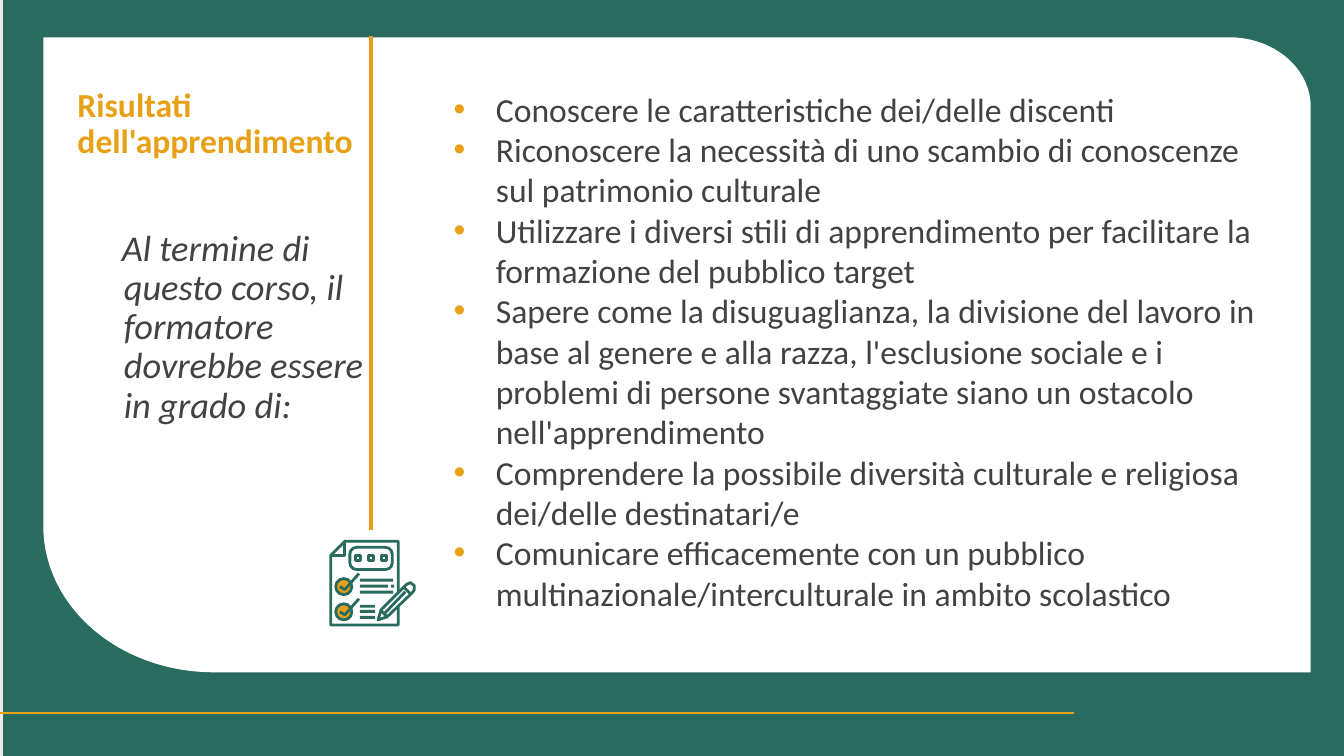
"""Build the learning outcomes slide with its checklist icon."""
from math import cos, pi, sin

from lxml import etree
from pptx import Presentation
from pptx.dml.color import RGBColor
from pptx.enum.shapes import MSO_CONNECTOR, MSO_SHAPE
from pptx.oxml.ns import qn
from pptx.util import Inches, Pt

RECTANGLE, ROUNDED, OVAL = MSO_SHAPE.RECTANGLE, MSO_SHAPE.ROUNDED_RECTANGLE, MSO_SHAPE.OVAL
STRAIGHT = MSO_CONNECTOR.STRAIGHT

COLORS = {"green": "296B5F", "amber": "E8A116", "text": "424242",
          "white": "FFFFFF", "edge": "ECECEC"}
FONT = "Calibri"
SLIDE_W, SLIDE_H = 13.33, 7.5
PANEL = {"left": 0.43, "top": 0.37, "right": 13, "bottom": 6.67}
TOP_RIGHT_RADII = (0.81, 0.69)
BOTTOM_LEFT_RADII = (1.69, 1.45)
ARC_STEPS = 40

HEADING = "Risultati dell'apprendimento"
INTRO = "Al termine di questo corso, il formatore dovrebbe essere in grado di:"
OUTCOMES = [
    "Conoscere le caratteristiche dei/delle discenti",
    "Riconoscere la necessità di uno scambio di conoscenze sul patrimonio culturale",
    "Utilizzare i diversi stili di apprendimento per facilitare la formazione del pubblico target",
    "Sapere come la disuguaglianza, la divisione del lavoro in base al genere e alla razza, "
    "l'esclusione sociale e i problemi di persone svantaggiate siano un ostacolo nell'apprendimento",
    "Comprendere la possibile diversità culturale e religiosa dei/delle destinatari/e",
    "Comunicare efficacemente con un pubblico multinazionale/interculturale in ambito scolastico",
]

ICON_STROKE = 2
PAGE = [(3.42, 5.37), (3.95, 5.37), (3.95, 6.2), (3.28, 6.2), (3.28, 5.51)]
PAGE_FOLD = [(3.28, 5.51), (3.42, 5.51), (3.42, 5.37)]
BADGE = (3.47, 5.43, 0.42, 0.22)
BADGE_SQUARES = [(3.53 + 0.125 * i, 5.51, 0.05, 0.05) for i in range(3)]
WRITTEN_LINES = [(3.57, 5.74, 0.33), (3.57, 5.8, 0.28), (3.88, 5.8, 0.03), (3.57, 5.86, 0.33),
                 (3.57, 6, 0.15), (3.57, 6.05, 0.15), (3.57, 6.11, 0.15)]
CHECK_CENTERS = [(3.41, 5.82), (3.41, 6.07)]
CHECK_RADIUS = 0.08
TICK = [(-0.04, 0), (0.01, 0.03), (0.15, -0.13)]
PENCIL = [(3.75, 6.15), (3.78, 6.05), (4.03, 5.8), (4.07, 5.78), (4.11, 5.81),
          (4.11, 5.85), (4.09, 5.88), (3.84, 6.12)]
PENCIL_DETAILS = [[(3.78, 6.06), (3.84, 6.12)], [(3.82, 6.08), (4.02, 5.87)],
                  [(4.01, 5.83), (4.07, 5.89)]]


def rgb(name):
    return RGBColor.from_string(COLORS[name])


def paint(shape, fill=None, line=None, weight=ICON_STROKE):
    shape.shadow.inherit = False
    if fill:
        shape.fill.solid()
        shape.fill.fore_color.rgb = rgb(fill)
    else:
        shape.fill.background()
    if line:
        shape.line.color.rgb = rgb(line)
        shape.line.width = Pt(weight)
    else:
        shape.line.fill.background()


def add_block(shapes, preset, box, fill=None, line=None, weight=ICON_STROKE):
    block = shapes.add_shape(preset, *map(Inches, box))
    paint(block, fill, line, weight)
    return block


def add_outline(shapes, points, fill=None, line=None, close=True):
    start, *rest = [(Inches(x), Inches(y)) for x, y in points]
    builder = shapes.build_freeform(*start)
    builder.add_line_segments(rest, close=close)
    paint(builder.convert_to_shape(), fill, line)


def add_rule(shapes, start, end, weight):
    rule = shapes.add_connector(STRAIGHT, *map(Inches, start + end))
    rule.line.color.rgb = rgb("amber")
    rule.line.width = Pt(weight)
    etree.SubElement(rule._element.spPr, qn("a:effectLst"))


def arc(center, radii, first_angle):
    angles = [first_angle + pi / 2 * i / ARC_STEPS for i in range(ARC_STEPS + 1)]
    return [(center[0] + radii[0] * cos(a), center[1] + radii[1] * sin(a)) for a in angles]


def panel_points():
    (tr_x, tr_y), (bl_x, bl_y) = TOP_RIGHT_RADII, BOTTOM_LEFT_RADII
    left, top, right, bottom = PANEL.values()
    return ([(left, top)] + arc((right - tr_x, top + tr_y), TOP_RIGHT_RADII, -pi / 2)
            + [(right, bottom)] + arc((left + bl_x, bottom - bl_y), BOTTOM_LEFT_RADII, pi / 2))


def add_bullet(properties):
    color = etree.SubElement(properties, qn("a:buClr"))
    etree.SubElement(color, qn("a:srgbClr"), val=COLORS["amber"])
    etree.SubElement(properties, qn("a:buFont"), typeface="Arial")
    etree.SubElement(properties, qn("a:buChar"), char="•")


def add_text(shapes, box, texts, size, color, margin=0, hanging=0, spacing=1.0,
             bold=False, italic=False, bullets=False):
    frame = shapes.add_textbox(*map(Inches, box)).text_frame
    frame.word_wrap = True
    for index, text in enumerate(texts):
        paragraph = frame.add_paragraph() if index else frame.paragraphs[0]
        paragraph.line_spacing = spacing
        properties = paragraph._p.get_or_add_pPr()
        properties.set("marL", str(Inches(margin)))
        properties.set("indent", str(Inches(-hanging)))
        if bullets:
            add_bullet(properties)
        run = paragraph.add_run()
        run.text = text
        run.font.name, run.font.size = FONT, Pt(size)
        run.font.bold, run.font.italic = bold, italic
        run.font.color.rgb = rgb(color)


def add_checklist_icon(slide):
    icon = slide.shapes.add_group_shape().shapes
    add_outline(icon, PAGE, "white", "green")
    add_outline(icon, PAGE_FOLD, line="green", close=False)
    badge = add_block(icon, ROUNDED, BADGE, line="green")
    badge.adjustments[0] = 0.3
    for square in BADGE_SQUARES:
        add_block(icon, RECTANGLE, square, line="green")
    for left, top, width in WRITTEN_LINES:
        add_block(icon, RECTANGLE, (left, top, width, 0.03), "green")
    for x, y in CHECK_CENTERS:
        circle = (x - CHECK_RADIUS, y - CHECK_RADIUS, 2 * CHECK_RADIUS, 2 * CHECK_RADIUS)
        add_block(icon, OVAL, circle, "amber", "green")
        add_outline(icon, [(x + dx, y + dy) for dx, dy in TICK], line="green", close=False)
    add_outline(icon, PENCIL, "white", "green")
    for detail in PENCIL_DETAILS:
        add_outline(icon, detail, line="green", close=False)


def main():
    deck = Presentation()
    deck.slide_width, deck.slide_height = Inches(SLIDE_W), Inches(SLIDE_H)
    slide = deck.slides.add_slide(deck.slide_layouts[6])
    shapes = slide.shapes
    add_block(shapes, RECTANGLE, (0, 0, SLIDE_W, SLIDE_H), "green")
    add_outline(shapes, panel_points(), "white")
    add_block(shapes, RECTANGLE, (0, 0, 0.03, SLIDE_H), "edge")
    add_rule(shapes, (0, 7.07), (10.65, 7.07), 1.5)
    add_text(shapes, (4.32, 0.83, 8.34, 5.61), OUTCOMES, 24, "text",
             margin=0.5, hanging=0.42, bullets=True)
    add_text(shapes, (0.67, 0.83, 3.45, 0.88), [HEADING], 24, "amber", spacing=0.9, bold=True)
    add_text(shapes, (1.11, 2.23, 2.77, 2.13), [INTRO], 26, "text",
             margin=0.02, hanging=0.02, spacing=0.9, italic=True)
    add_rule(shapes, (3.68, 0.36), (3.68, 5.26), 2.75)
    add_checklist_icon(slide)
    deck.save("out.pptx")


if __name__ == "__main__":
    main()
